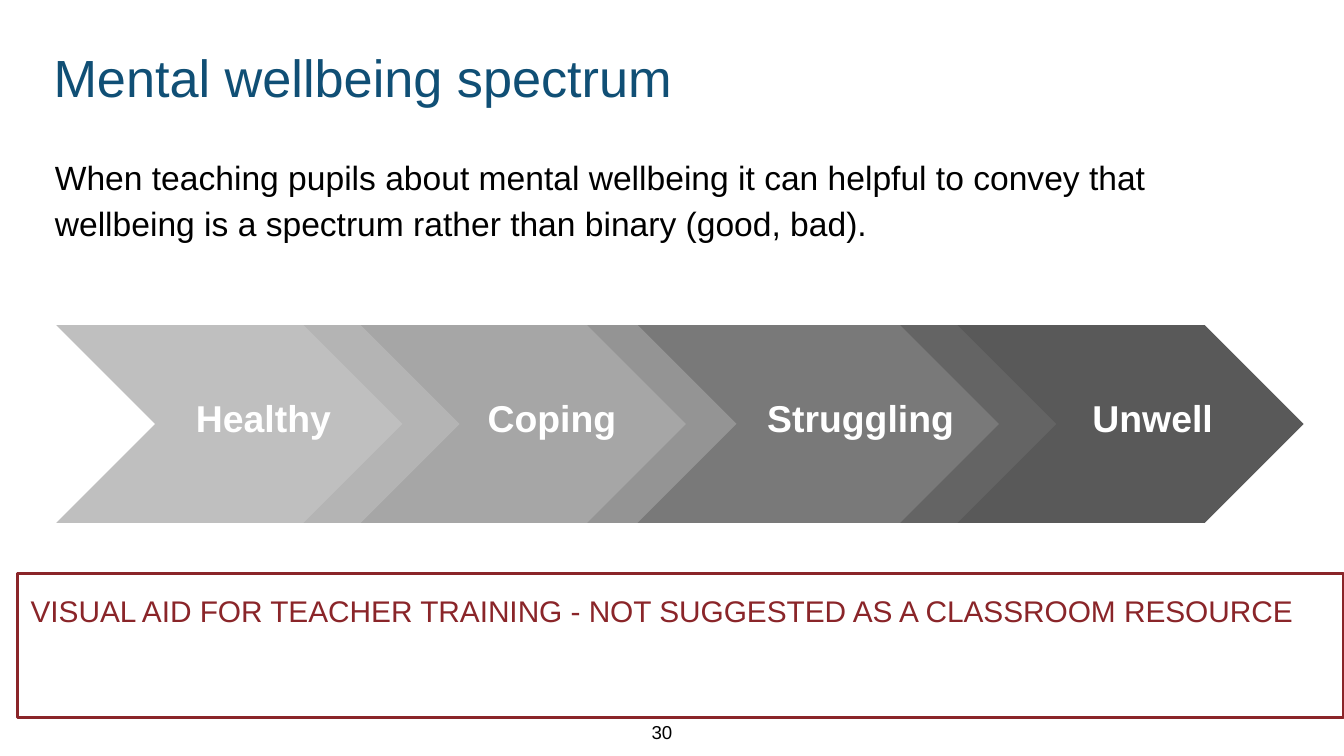
"""Build the mental wellbeing spectrum slide."""
from lxml import etree
from pptx import Presentation
from pptx import util as u
from pptx.dml.color import RGBColor
from pptx.enum import shapes, text
from pptx.oxml.ns import qn


def paint(color, tone):
    color.rgb = RGBColor.from_string(tone)


def write(shape, words, size, tone, bold=False):
    frame = shape.text_frame
    frame.text = words
    frame.word_wrap = True
    frame.vertical_anchor = text.MSO_ANCHOR.TOP
    frame.margin_left = frame.margin_right = u.Inches(0.1)
    frame.margin_top = frame.margin_bottom = u.Inches(0.1)
    para = frame.paragraphs[0]
    para.alignment = text.PP_ALIGN.LEFT
    font = para.runs[0].font
    font.name, font.size, font.bold = "Arial", u.Pt(size), bold
    paint(font.color, tone)
    return para


deck = Presentation()
deck.slide_width = u.Inches(10)
deck.slide_height = u.Inches(10 * 9 / 16)
page = deck.slides.add_slide(deck.slide_layouts[6])
items = page.shapes

title = items.add_textbox(u.Inches(0.3), u.Inches(0.24), u.Inches(8.48), u.Inches(0.63))
write(title, "Mental wellbeing spectrum", 28, "104F75")

note = items.add_shape(shapes.MSO_SHAPE.RECTANGLE, u.Inches(0.13), u.Inches(4.27),
                       u.Inches(9.87), u.Inches(1.07))
note.shadow.inherit = False
note.fill.background()
note.line.width = u.Pt(1.5)
paint(note.line.color, "8A2529")
para = write(note, "VISUAL AID FOR TEACHER TRAINING - NOT SUGGESTED AS A CLASSROOM RESOURCE",
             16, "8A2529")
para.line_spacing = 1.15
para.space_after = u.Pt(16)

intro = items.add_textbox(u.Inches(0.31), u.Inches(1.02), u.Inches(8.98), u.Inches(0.83))
para = write(intro, "When teaching pupils about mental wellbeing it can helpful to convey that "
             "wellbeing is a spectrum rather than binary (good, bad).", 18, "000000")
para.line_spacing = 1.15

folio = items.add_textbox(u.Inches(4.71), u.Inches(5.26), u.Inches(0.39), u.Inches(0.37))
para = write(folio, "30", 10, "000000")
para.alignment = text.PP_ALIGN.RIGHT
folio.text_frame.vertical_anchor = text.MSO_ANCHOR.MIDDLE

stages = [
    ("Unwell", 6.7, 3, "434343", 88, 8.03, 1.26),
    ("Struggling", 4.37, 3.49, "666666", 87, 5.61, 1.82),
    ("Coping", 2.26, 3.22, "999999", 87, 3.53, 1.26),
    ("Healthy", 0.42, 3, "B7B7B7", 88, 1.36, 1.26),
]
for name, left, width, tone, alpha, start, span in stages:
    arrow = items.add_shape(shapes.MSO_SHAPE.CHEVRON, u.Inches(left), u.Inches(2.42),
                            u.Inches(width), u.Inches(1.47))
    arrow.shadow.inherit = False
    arrow.line.fill.background()
    arrow.fill.solid()
    paint(arrow.fill.fore_color, tone)
    color = arrow.element.spPr.find(qn("a:solidFill")).find(qn("a:srgbClr"))
    etree.SubElement(color, qn("a:alpha")).set("val", str(alpha * 1000))

for name, left, width, tone, alpha, start, span in stages:
    label = items.add_textbox(u.Inches(start), u.Inches(2.84), u.Inches(span), u.Inches(0.47))
    write(label, name, 20, "FFFFFF", True)

deck.save("out.pptx")
